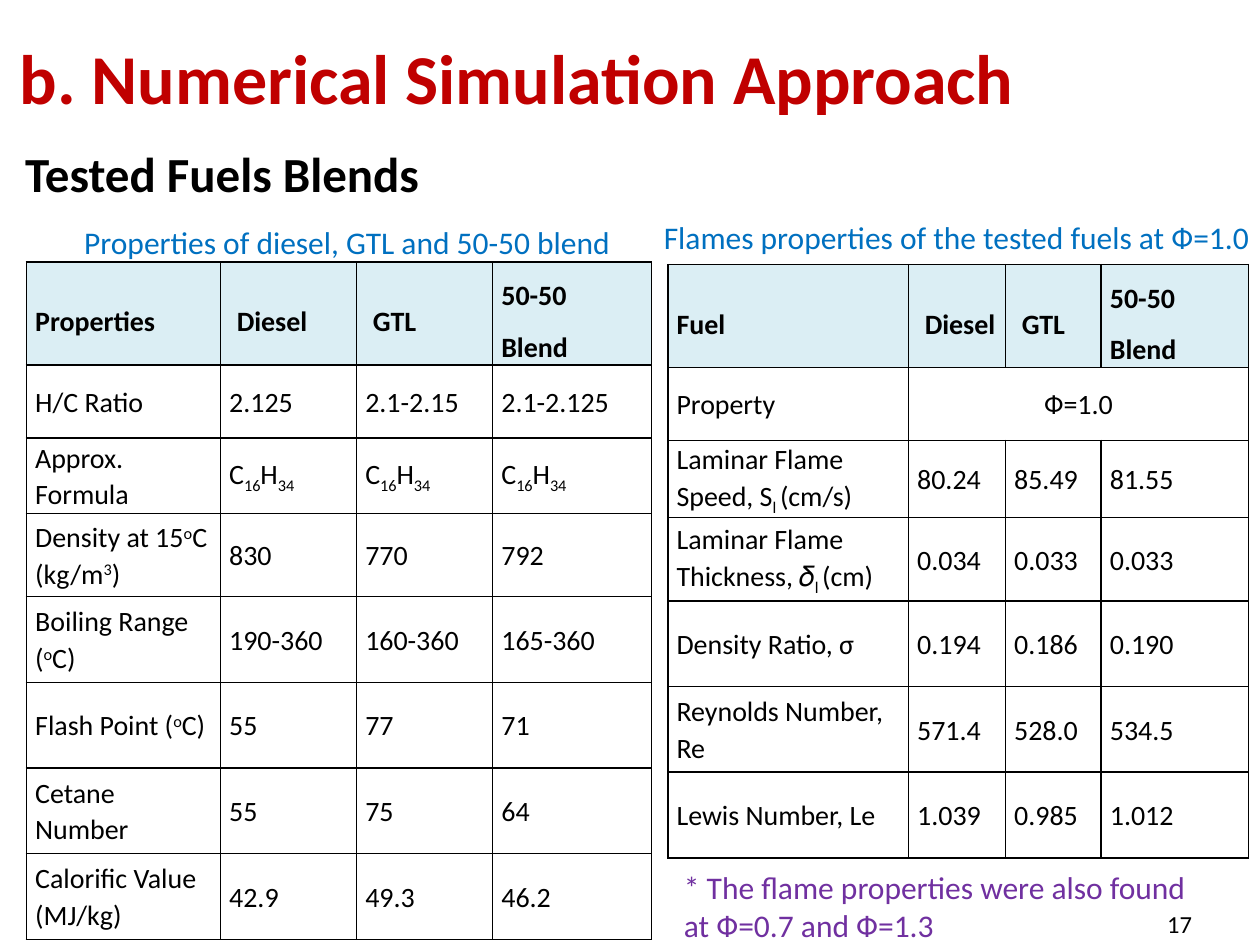
from dataclasses import dataclass

from lxml import etree
from pptx import Presentation
from pptx import util as u
from pptx.dml.color import RGBColor
from pptx.enum import text as t
from pptx.oxml.ns import qn

WIDTH, HEIGHT = u.Inches(10), u.Inches(7.5)
COLUMNS, ROWS = 100, 75  # layout grid of the slide
FONT = "Calibri"
BLACK, RED, BLUE, PURPLE, PALE = "000000", "C00000", "0070C0", "7030A0", "DBEEF4"
BASELINES = {"_": "-25000", "^": "30000"}
LEFT, CENTER, RIGHT = t.PP_ALIGN.LEFT, t.PP_ALIGN.CENTER, t.PP_ALIGN.RIGHT
TOP, MIDDLE = t.MSO_ANCHOR.TOP, t.MSO_ANCHOR.MIDDLE


@dataclass
class Label:
    wording: str
    left: float  # grid columns
    top: float  # grid rows
    width: float
    height: float
    size: int
    color: str
    bold: bool = False
    align: t.PP_ALIGN = LEFT
    anchor: t.MSO_ANCHOR = TOP
    indent: float = 0
    spacing: float = 1.0


@dataclass
class FuelTable:
    left: float
    top: float
    widths: list[float]
    heights: list[float]
    content: list[list[str]]


def across(columns: float) -> int:
    return round(WIDTH * columns / COLUMNS)


def down(rows: float) -> int:
    return round(HEIGHT * rows / ROWS)


def color_of(code: str) -> RGBColor:
    return RGBColor.from_string(code)


def set_all(target, values: dict) -> None:
    for name, value in values.items():
        setattr(target, name, value)


def write(paragraph, wording: str, size: int, color: str, bold: bool) -> None:
    """Write parts split by |, where _ lowers a part and ^ raises it."""
    for part in wording.split("|"):
        run = paragraph.add_run()
        shift = BASELINES.get(part[:1])
        run.text = part[1:] if shift else part
        set_all(run.font, {"name": FONT, "size": u.Pt(size), "bold": bold})
        run.font.color.rgb = color_of(color)
        if shift:
            run.font._element.set("baseline", shift)


def draw_label(slide, label: Label) -> None:
    box = slide.shapes.add_textbox(across(label.left), down(label.top),
                                   across(label.width), down(label.height))
    set_all(box.text_frame, {"word_wrap": True, "vertical_anchor": label.anchor})
    paragraph = box.text_frame.paragraphs[0]
    set_all(paragraph, {"alignment": label.align, "line_spacing": label.spacing})
    if label.indent:
        paragraph._p.get_or_add_pPr().set("marL", str(across(label.indent)))
    write(paragraph, label.wording, label.size, label.color, label.bold)


def draw_borders(cell) -> None:
    properties = cell._tc.get_or_add_tcPr()
    for side in ("lnL", "lnR", "lnT", "lnB"):
        line = etree.SubElement(properties, qn(f"a:{side}"), w=str(u.Pt(1)))
        fill = etree.SubElement(line, qn("a:solidFill"))
        etree.SubElement(fill, qn("a:srgbClr"), val=BLACK)


def draw_cell(cell, wording: str, header: bool, column: int) -> None:
    # Header names are set in slightly; the blend's name wraps to two lines
    left, right = 0.7, 0.7
    if header and column in (1, 2):
        left, right = 1.3, 0.2
    elif header and column == 3:
        right = 3
    set_all(cell, {"margin_left": across(left), "margin_right": across(right),
                   "margin_top": 0, "margin_bottom": 0, "vertical_anchor": MIDDLE})
    draw_borders(cell)
    if header:
        cell.fill.solid()
        cell.fill.fore_color.rgb = color_of(PALE)
    else:
        cell.fill.background()
    paragraph = cell.text_frame.paragraphs[0]
    set_all(paragraph, {"line_spacing": 1.5 if header else 1.07,
                        "alignment": CENTER if cell.is_merge_origin else LEFT})
    if wording:
        write(paragraph, wording, 16, BLACK, header)


def draw_table(slide, fuels: FuelTable) -> None:
    grid = slide.shapes.add_table(
        len(fuels.heights), len(fuels.widths), across(fuels.left), down(fuels.top),
        across(sum(fuels.widths)), down(sum(fuels.heights))).table
    set_all(grid, {"first_row": False, "horz_banding": False})
    for column, width in zip(grid.columns, fuels.widths):
        column.width = across(width)
    for row, height in zip(grid.rows, fuels.heights):
        row.height = down(height)
    for r, line in enumerate(fuels.content):
        # A short line lets its last cell span the remaining columns
        if len(line) < len(fuels.widths):
            grid.cell(r, len(line) - 1).merge(grid.cell(r, len(fuels.widths) - 1))
        for c in range(len(fuels.widths)):
            draw_cell(grid.cell(r, c), line[c] if c < len(line) else "", r == 0, c)


ROW_HEIGHTS = [5.1, 5.8, 6, 6.6, 6.8, 6.8, 6.8, 6.8]
FUEL_NAMES = ["Diesel", "GTL", "50-50 Blend"]
FORMULA = "C|_16|H|_34"

LABELS = [
    Label("17", 87.3, 71.3, 8.3, 4, 14, BLACK, align=RIGHT, anchor=MIDDLE),
    Label("b. Numerical Simulation Approach", 0.6, -0.2, 90, 12.5, 40, RED,
          bold=True, anchor=MIDDLE),
    Label("Tested Fuels Blends", -0.7, 10.9, 101.1, 5.7, 28, BLACK,
          bold=True, indent=1.7),
    Label("Properties of diesel, GTL and 50-50 blend", 3.2, 15.7, 47.4, 5.6, 18, BLUE,
          indent=2.5, spacing=1.5),
    Label("Flames properties of the tested fuels at Ф=1.0", 51.7, 16.8, 49, 4, 18, BLUE),
    Label("* The flame properties were also found at Ф=0.7 and Ф=1.3",
          53.3, 68.4, 43.6, 6.6, 18, PURPLE),
]

TABLES = [
    # Fuel properties
    FuelTable(2.1, 20.8, [15.4, 10.8, 10.8, 12.6], ROW_HEIGHTS, [
        ["Properties", *FUEL_NAMES],
        ["H/C Ratio", "2.125", "2.1-2.15", "2.1-2.125"],
        ["Approx. Formula", FORMULA, FORMULA, FORMULA],
        ["Density at 15|^o|C (kg/m|^3|)", "830", "770", "792"],
        ["Boiling Range (|^o|C)", "190-360", "160-360", "165-360"],
        ["Flash Point (|^o|C)", "55", "77", "71"],
        ["Cetane Number", "55", "75", "64"],
        ["Calorific Value (MJ/kg)", "42.9", "49.3", "46.2"],
    ]),
    # Flame properties
    FuelTable(53, 21, [19.1, 7.7, 7.6, 11.7], ROW_HEIGHTS[:-1], [
        ["Fuel", *FUEL_NAMES],
        ["Property", "Ф=1.0"],
        ["Laminar Flame Speed, S|_l |(cm/s)", "80.24", "85.49", "81.55"],
        ["Laminar Flame Thickness, 𝛿|_l |(cm)", "0.034", "0.033", "0.033"],
        ["Density Ratio, σ", "0.194", "0.186", "0.190"],
        ["Reynolds Number, Re", "571.4", "528.0", "534.5"],
        ["Lewis Number, Le", "1.039", "0.985", "1.012"],
    ]),
]


def main() -> None:
    deck = Presentation()
    set_all(deck, {"slide_width": WIDTH, "slide_height": HEIGHT})
    slide = deck.slides.add_slide(deck.slide_layouts[6])
    for fuels in TABLES:
        draw_table(slide, fuels)
    for label in LABELS:
        draw_label(slide, label)
    deck.save("out.pptx")


if __name__ == "__main__":
    main()
